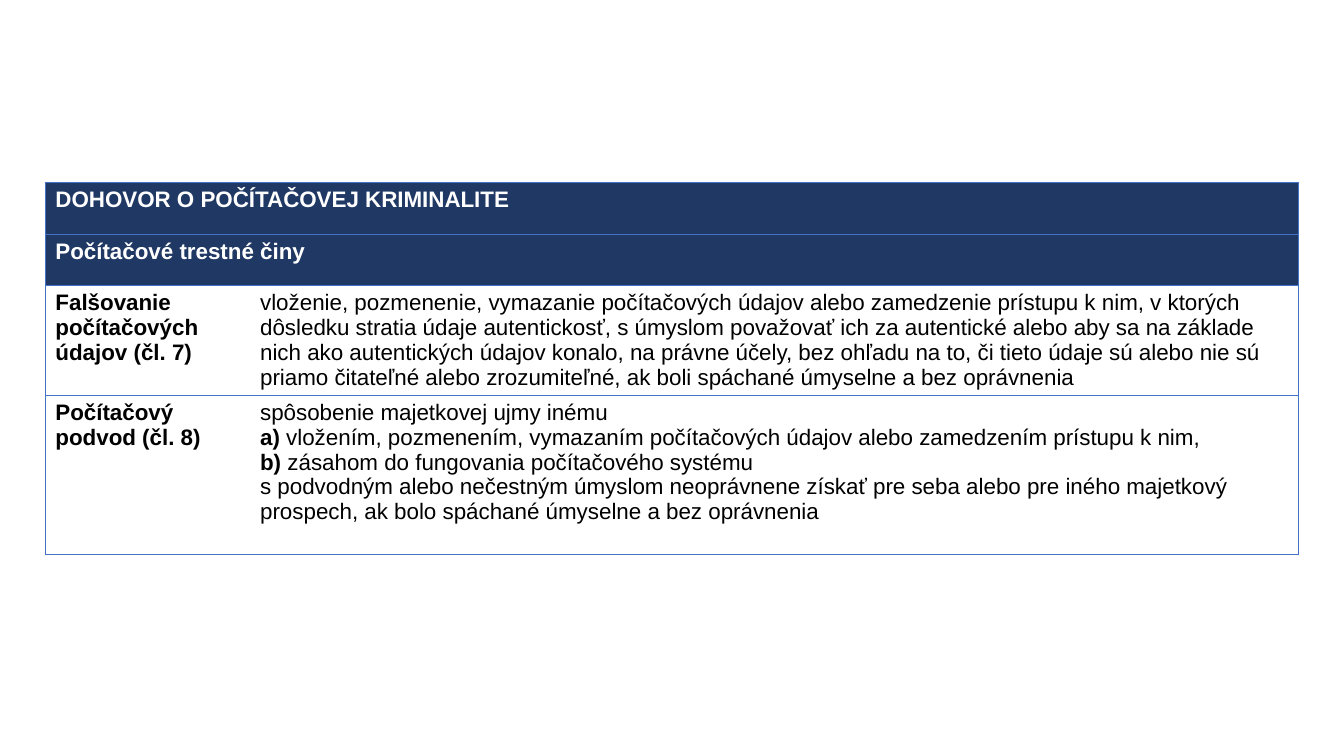
from lxml import etree
from pptx import Presentation
from pptx.dml.color import RGBColor as RGB
from pptx.oxml.ns import qn
from pptx.util import Inches, Pt

COLORS = {"navy": "203864", "blue": "4472C4", "white": "FFFFFF", "black": "000000"}

TITLES = ["DOHOVOR O POČÍTAČOVEJ KRIMINALITE", "Počítačové trestné činy"]
CRIMES = [
    ("Falšovanie počítačových údajov (čl. 7)", [
        [("vloženie, pozmenenie, vymazanie počítačových údajov alebo zamedzenie prístupu "
          "k nim, v ktorých dôsledku stratia údaje autentickosť, s úmyslom považovať ich za "
          "autentické alebo aby sa na základe nich ako autentických údajov konalo, na právne "
          "účely, bez ohľadu na to, či tieto údaje sú alebo nie sú priamo čitateľné alebo "
          "zrozumiteľné, ak boli spáchané úmyselne a bez oprávnenia", False)],
    ]),
    ("Počítačový podvod (čl. 8)", [
        [("spôsobenie majetkovej ujmy inému", False)],
        [("a) ", True), ("vložením, pozmenením, vymazaním počítačových údajov alebo "
                         "zamedzením prístupu k nim,", False)],
        [("b) ", True), ("zásahom do fungovania počítačového systému", False)],
        [("s podvodným alebo nečestným úmyslom neoprávnene získať pre seba alebo pre iného "
          "majetkový prospech, ak bolo spáchané úmyselne a bez oprávnenia", False)],
    ]),
]
COL_WIDTHS = [2.03, 10.4]
ROW_HEIGHTS = [0.51, 0.51, 1.09, 1.58]


class SlideBuilder:
    font = "Arial"
    size = Pt(16)
    border = Pt(0.5)

    def __init__(self, slide):
        self.slide = slide

    def table(self, left, top, widths, heights):
        frame = self.slide.shapes.add_table(
            len(heights), len(widths), Inches(left), Inches(top),
            Inches(sum(widths)), Inches(sum(heights)))
        table = frame.table
        table.first_row = table.horz_banding = False
        for col, width in zip(table.columns, widths):
            col.width = Inches(width)
        for row, height in zip(table.rows, heights):
            row.height = Inches(height)
        return table

    def borders(self, cell, sides):
        tc_pr = cell._tc.get_or_add_tcPr()
        for i, side in enumerate("LRTB"):
            ln = etree.Element(qn(f"a:ln{side}"), w=str(self.border))
            if side in sides:
                fill = etree.SubElement(ln, qn("a:solidFill"))
                etree.SubElement(fill, qn("a:srgbClr"), val=COLORS["blue"])
            else:
                etree.SubElement(ln, qn("a:noFill"))
            tc_pr.insert(i, ln)

    def cell(self, cell, paragraphs, sides, color="black", fill=None):
        if fill:
            cell.fill.solid()
            cell.fill.fore_color.rgb = RGB.from_string(COLORS[fill])
        else:
            cell.fill.background()
        self.borders(cell, sides)
        tf = cell.text_frame
        for i, runs in enumerate(paragraphs):
            p = tf.add_paragraph() if i else tf.paragraphs[0]
            for text, bold in runs:
                r = p.add_run()
                r.text = text
                r.font.name = self.font
                r.font.size = self.size
                r.font.bold = bold
                r.font.color.rgb = RGB.from_string(COLORS[color])


def main():
    prs = Presentation()
    prs.slide_width, prs.slide_height = Inches(13.33), Inches(7.5)
    builder = SlideBuilder(prs.slides.add_slide(prs.slide_layouts[6]))
    table = builder.table(0.45, 1.81, COL_WIDTHS, ROW_HEIGHTS)
    for row, title in enumerate(TITLES):
        first, last = table.cell(row, 0), table.cell(row, 1)
        first.merge(last)
        builder.cell(first, [[(title, True)]], "LRTB", "white", "navy")
        builder.cell(last, [], "RTB", fill="navy")
    for row, (crime, definition) in enumerate(CRIMES, len(TITLES)):
        builder.cell(table.cell(row, 0), [[(crime, True)]], "LTB")
        builder.cell(table.cell(row, 1), definition, "RTB")
    prs.save("out.pptx")


if __name__ == "__main__":
    main()
